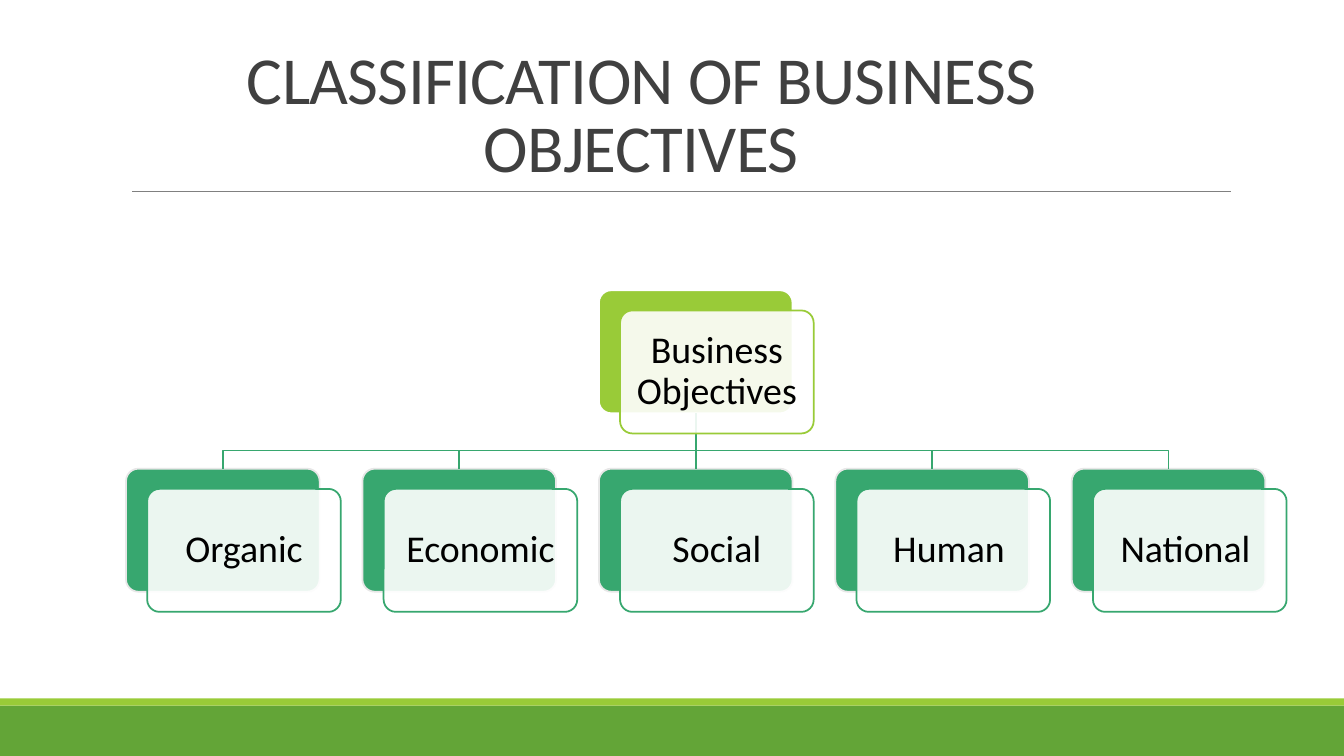
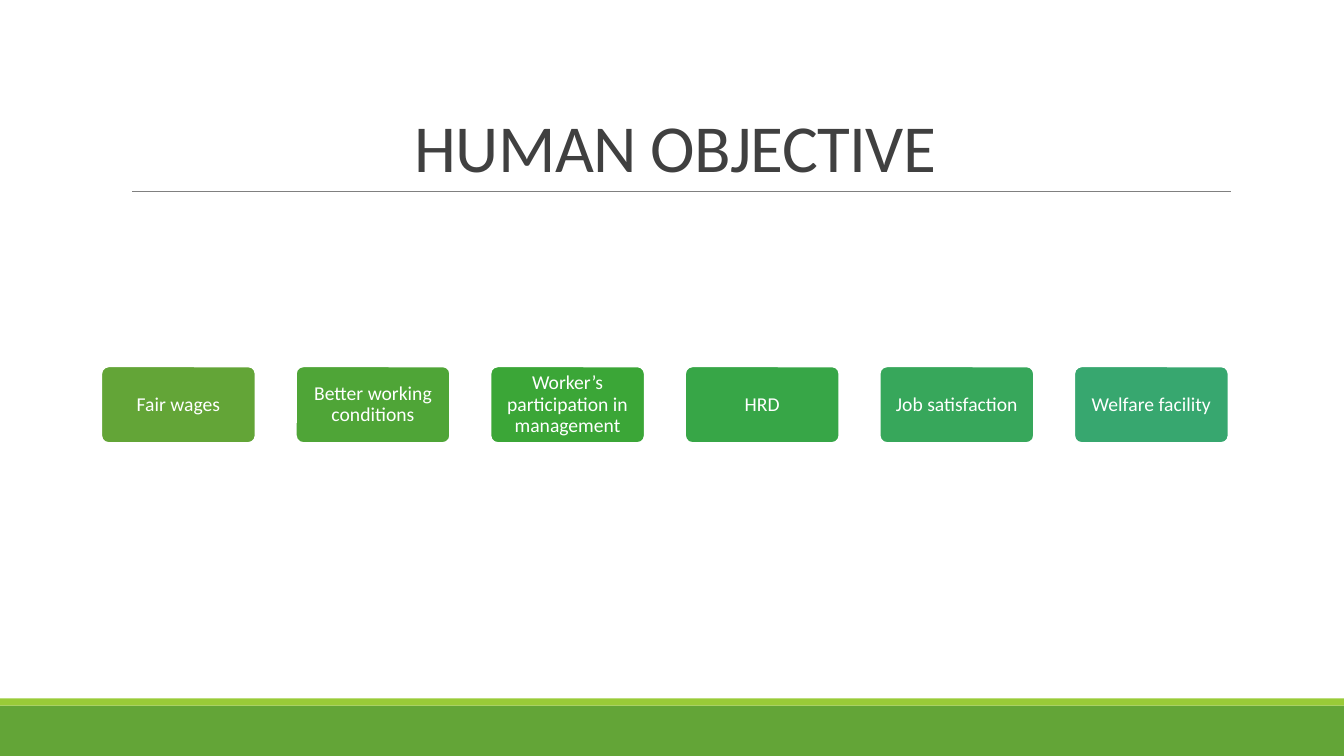
from pptx import Presentation
from pptx.dml.color import RGBColor
from pptx.enum.shapes import MSO_CONNECTOR, MSO_SHAPE
from pptx.enum.text import MSO_ANCHOR, MSO_AUTO_SIZE, PP_ALIGN
from pptx.oxml.ns import qn
from pptx.util import Inches, Pt
from lxml.etree import SubElement

THEME = dict(
    font="Calibri", white="FFFFFF", ink="404040", black="000000", rule="808080",
    green="63A537", lime="99CB38", teal="37A76F", pale="E7E7E7",
    title=48, node=27, card=14, thin=0.5, edge=1.25, thick=2,
)
WIDE, HIGH = 13.33, 7.5

TREE = dict(
    title="CLASSIFICATION OF BUSINESS OBJECTIVES", spot=(0.83, 0.31, 11.06, 1.59),
    root="Business Objectives",
    kids=["Organic", "Economic", "Social", "Human ", "National "],
)
CARDS = dict(
    title="HUMAN OBJECTIVE", spot=(1.2, 0.31, 11, 1.59),
    items=[
        ("Fair wages", "63A537"),
        ("Better working conditions", "4FA537"),
        ("Worker’s participation in management", "3BA637"),
        ("HRD", "37A647"),
        ("Job satisfaction", "37A75B"),
        ("Welfare facility", "37A76F"),
    ],
)
NODE = (1.92, 1.22)
SHIFT = (0.21, 0.2)
CARD = (1.54, 0.77)


def rgb(name):
    return RGBColor.from_string(THEME.get(name, name))


def assign(obj, **vals):
    for key, val in vals.items():
        setattr(obj, key, val)


def place(shape, spot):
    assign(shape, **dict(zip(("left", "top", "width", "height"), map(Inches, spot))))


def spread(first, last, count):
    """Left edges at equal steps from first to last."""
    return [first + (last - first) * i / (count - 1) for i in range(count)]


def stroke(shape, color, width):
    shape.line.color.rgb = rgb(color)
    shape.line.width = Pt(width)


def box(slide, kind, spot, fill, line=None, width=THEME["edge"], alpha=None):
    shape = slide.shapes.add_shape(kind, *map(Inches, spot))
    shape.shadow.inherit = False
    shape.fill.solid()
    shape.fill.fore_color.rgb = rgb(fill)
    if alpha:
        tint = shape.fill._xPr.find(qn("a:solidFill"))[0]
        SubElement(tint, qn("a:alpha")).set("val", str(alpha * 1000))
    if line:
        stroke(shape, line, width)
    else:
        shape.line.fill.background()
    if kind == MSO_SHAPE.ROUNDED_RECTANGLE:
        shape.adjustments[0] = 0.1
    return shape


def write(shape, text, size, color, space=0.9, anchor=MSO_ANCHOR.MIDDLE, inset=None):
    frame = shape.text_frame
    assign(frame, text=text, word_wrap=True, auto_size=MSO_AUTO_SIZE.NONE,
           vertical_anchor=anchor)
    if inset is not None:
        sides = ("left", "top", "right", "bottom")
        assign(frame, **{f"margin_{side}": Inches(inset) for side in sides})
    para = frame.paragraphs[0]
    assign(para, alignment=PP_ALIGN.CENTER, line_spacing=space)
    run = para.runs[0]
    assign(run.font, name=THEME["font"], size=Pt(size))
    run.font.color.rgb = rgb(color)
    return run


def link(slide, start, end, color, width):
    line = slide.shapes.add_connector(
        MSO_CONNECTOR.STRAIGHT, *map(Inches, (*start, *end)))
    stroke(line, color, width)
    SubElement(line._element.spPr, qn("a:effectLst"))
    return line


def elbow(slide, points):
    (x, y), *rest = [(Inches(a), Inches(b)) for a, b in points]
    path = slide.shapes.build_freeform(x, y)
    path.add_line_segments(rest, close=False)
    shape = path.convert_to_shape()
    shape.shadow.inherit = False
    shape.fill.background()
    stroke(shape, "teal", THEME["edge"])


def dress(layout, slide):
    """Move the bands and the title rule from the slide to its layout."""
    parts = [
        box(slide, MSO_SHAPE.RECTANGLE, (0, 7, WIDE, 0.5), "green"),
        box(slide, MSO_SHAPE.RECTANGLE, (0, 6.93, WIDE, 0.07), "lime"),
        link(slide, (1.31, 1.9), (12.21, 1.9), "rule", THEME["thin"]),
    ]
    for i, part in enumerate(parts):
        node = part._element
        node.xpath(".//p:cNvPr")[0].set("id", str(20 + i))
        layout.shapes.element.insert(2 + i, node)


def head(slide, data):
    title = slide.shapes.title
    place(title, data["spot"])
    run = write(title, data["title"], THEME["title"], "ink", 0.85, MSO_ANCHOR.BOTTOM)
    run._r.get_or_add_rPr().set("spc", "-50")


def tree(slide, data):
    head(slide, data)
    w, h = NODE
    dx, dy = SHIFT
    top, low, bend = 2.88, 4.65, 4.47
    kids = data["kids"]
    lefts = spread(1.25, 10.63, len(kids))
    mid = lefts[len(kids) // 2]
    nodes = [(data["root"], mid, top, "lime", "white")]
    nodes += [(kid, x, low, "teal", "pale") for kid, x in zip(kids, lefts)]

    backs = [box(slide, MSO_SHAPE.ROUNDED_RECTANGLE, (x, y, w, h), fill, edge)
             for _, x, y, fill, edge in nodes]
    stem, foot = mid + w / 2, top + h
    for x, back in zip(lefts, backs[1:]):
        end = x + w / 2
        if x == mid:
            line = link(slide, (stem, foot), (end, low), "teal", THEME["edge"])
            line.begin_connect(backs[0], 2)
            line.end_connect(back, 0)
        else:
            elbow(slide, [(stem, foot), (stem, bend), (end, bend), (end, low)])
    for text, x, y, color, _ in nodes:
        front = box(slide, MSO_SHAPE.ROUNDED_RECTANGLE, (x + dx, y + dy, w, h),
                    "white", color, alpha=90)
        write(front, text, THEME["node"], "black", inset=0.06)


def cards(slide, data):
    head(slide, data)
    items = data["items"]
    for (text, fill), x in zip(items, spread(1, 10.65, len(items))):
        card = box(slide, MSO_SHAPE.ROUNDED_RECTANGLE, (x, 3.63, *CARD), fill,
                   "white", THEME["thick"])
        write(card, text, THEME["card"], "white", inset=0.03)


def main():
    deck = Presentation()
    assign(deck, slide_width=Inches(WIDE), slide_height=Inches(HIGH))
    layout = deck.slide_layouts[5]
    for draw, data in ((tree, TREE), (cards, CARDS)):
        slide = deck.slides.add_slide(layout)
        if draw is tree:
            dress(layout, slide)
        draw(slide, data)
    deck.save("out.pptx")


if __name__ == "__main__":
    main()
